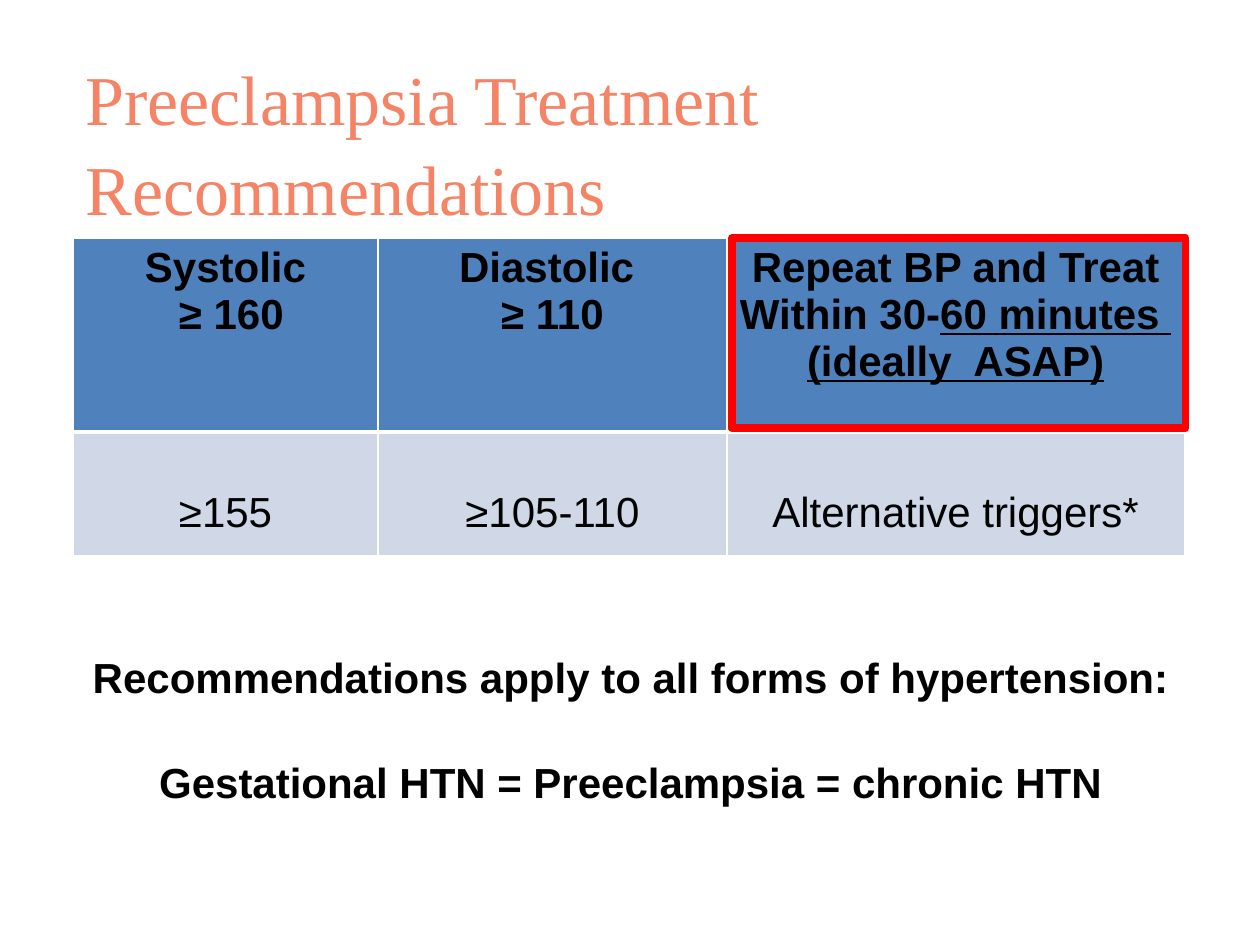
"""Build the slide on preeclampsia treatment recommendations."""
from lxml import etree
from pptx import Presentation
from pptx.dml.color import RGBColor
from pptx.enum.shapes import MSO_SHAPE
from pptx.enum.text import MSO_ANCHOR, PP_ALIGN
from pptx.oxml.ns import qn
from pptx.util import Inches, Pt

CENTER, LEFT = PP_ALIGN.CENTER, PP_ALIGN.LEFT
TOP, MIDDLE, BOTTOM = MSO_ANCHOR.TOP, MSO_ANCHOR.MIDDLE, MSO_ANCHOR.BOTTOM
RECT = MSO_SHAPE.RECTANGLE
TITLE_ONLY = 5
COLORS = {
    "title": "F58466",
    "text": "000000",
    "header": "4F81BD",
    "row": "D0D8E8",
    "border": "FFFFFF",
    "highlight": "FF0000",
}
HEADERS = [
    [[("Systolic", False)], [(" ≥ 160", False)]],
    [[("Diastolic ", False)], [("≥ 110", False)]],
    [
        [("Repeat BP and Treat Within 30-", False), ("60 minutes ", True)],
        [("(ideally  ASAP)", True)],
    ],
]
TRIGGERS = ["≥155", "≥105-110", "Alternative triggers*"]
COL_WIDTHS = [2.42, 2.77, 3.63]
ROW_HEIGHTS = [1.54, 0.98]


def rgb(name):
    return RGBColor.from_string(COLORS[name])


def write(tf, paragraphs, size=24, font="Arial", color="text", bold=False,
          align=CENTER, gap=0, spacing=None):
    """Fill a text frame with paragraphs of (text, underlined) runs."""
    for i, runs in enumerate(paragraphs):
        p = tf.add_paragraph() if i else tf.paragraphs[0]
        p.alignment = align
        p.line_spacing = spacing
        if i and gap:
            p.space_before = Pt(gap)
        for text, underline in runs:
            r = p.add_run()
            r.text = text
            r.font.size, r.font.name = Pt(size), font
            r.font.bold, r.font.underline = bold, underline
            r.font.color.rgb = rgb(color)


def set_borders(cell, bottom):
    """Draw the four borders of a cell, with its own bottom width."""
    tc_pr = cell._tc.get_or_add_tcPr()
    widths = {"lnL": 1, "lnR": 1, "lnT": 1, "lnB": bottom}
    for i, (tag, width) in enumerate(widths.items()):
        ln = etree.Element(qn(f"a:{tag}"), w=str(Pt(width)))
        fill = etree.SubElement(ln, qn("a:solidFill"))
        etree.SubElement(fill, qn("a:srgbClr"), val=COLORS["border"])
        tc_pr.insert(i, ln)


def fill_cell(cell, paragraphs, fill, bold=False, anchor=TOP, bottom=1):
    cell.fill.solid()
    cell.fill.fore_color.rgb = rgb(fill)
    cell.vertical_anchor = anchor
    write(cell.text_frame, paragraphs, bold=bold)
    set_borders(cell, bottom)


def add_title(s, text):
    sp = s.shapes.title
    sp.left, sp.top = Inches(0.58), Inches(0.61)
    sp.width, sp.height = Inches(8.75), Inches(1)
    sp.text_frame.vertical_anchor = MIDDLE
    write(sp.text_frame, [[(text, False)]], size=40, font="Times New Roman",
          color="title", align=LEFT, spacing=1.07)


def add_thresholds(s):
    """Add the table of blood pressure thresholds."""
    table = s.shapes.add_table(
        len(ROW_HEIGHTS), len(COL_WIDTHS), Inches(0.58), Inches(1.89),
        Inches(sum(COL_WIDTHS)), Inches(sum(ROW_HEIGHTS))).table
    for row, height in zip(table.rows, ROW_HEIGHTS):
        row.height = Inches(height)
    for c, width in enumerate(COL_WIDTHS):
        table.columns[c].width = Inches(width)
        fill_cell(table.cell(0, c), HEADERS[c], "header", bold=True, bottom=3)
        cell = table.cell(1, c)
        fill_cell(cell, [[(TRIGGERS[c], False)]], "row", anchor=BOTTOM)
        cell.margin_bottom = Inches(0.15)


def add_note(s, lines):
    sp = s.shapes.add_textbox(
        Inches(0.37), Inches(5.09), Inches(9.27), Inches(2.12))
    sp.text_frame.word_wrap = True
    write(sp.text_frame, [[(line, False)] for line in lines], bold=True,
          gap=29, spacing=1.08)


def add_highlight(s):
    """Outline the header cell that gives the time limit."""
    sp = s.shapes.add_shape(
        RECT, Inches(5.81), Inches(1.89), Inches(3.6), Inches(1.51))
    sp.shadow.inherit = False
    sp.fill.background()
    sp.line.color.rgb = rgb("highlight")
    sp.line.width = Pt(4.5)
    etree.SubElement(sp.line._get_or_add_ln(), qn("a:round"))


def main():
    prs = Presentation()
    prs.slide_width, prs.slide_height = Inches(10), Inches(7.5)
    s = prs.slides.add_slide(prs.slide_layouts[TITLE_ONLY])
    add_title(s, "Preeclampsia Treatment Recommendations")
    add_thresholds(s)
    add_note(s, ["Recommendations apply to all forms of hypertension:",
                 "Gestational HTN = Preeclampsia = chronic HTN"])
    add_highlight(s)
    prs.save("out.pptx")


if __name__ == "__main__":
    main()
